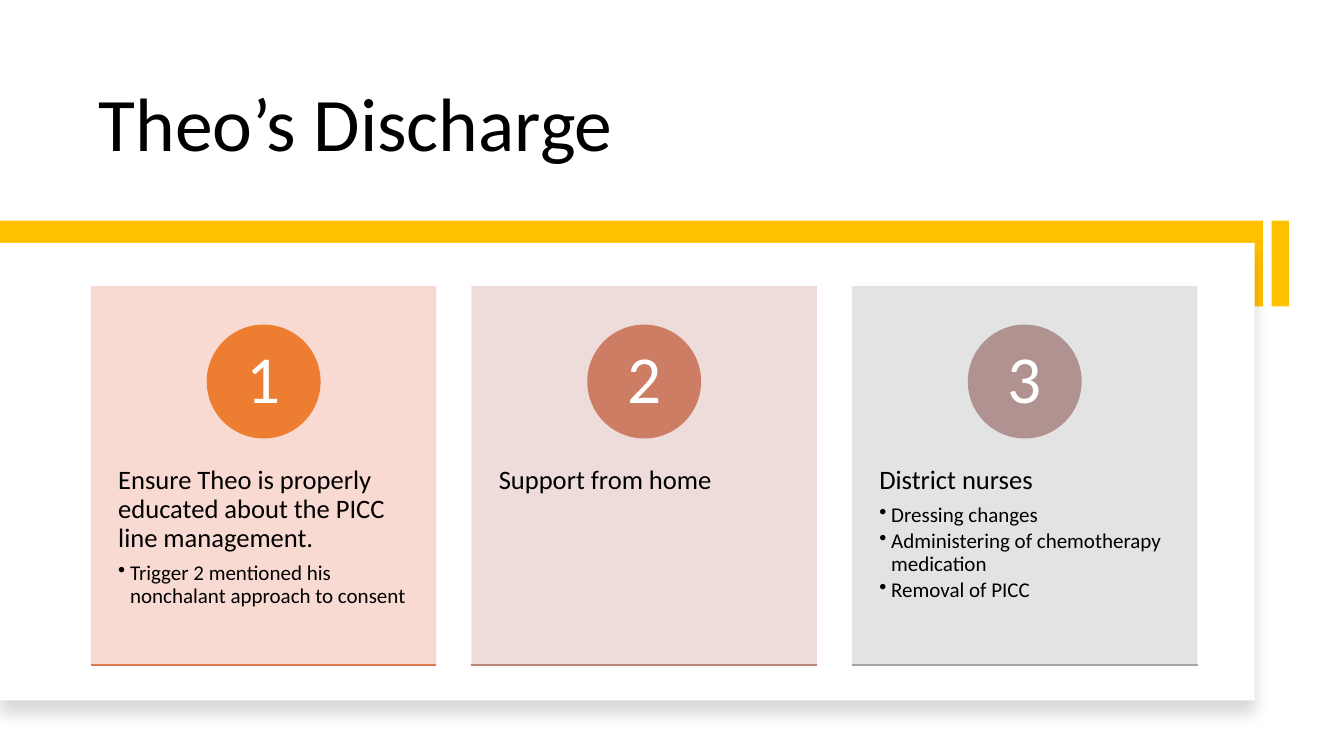
"""Build the discharge slide with three numbered cards."""
from dataclasses import dataclass

from lxml.etree import SubElement
from pptx import Presentation
from pptx.dml.color import RGBColor
from pptx.enum.shapes import MSO_CONNECTOR as Connector, MSO_SHAPE as Preset
from pptx.enum.text import MSO_ANCHOR as Anchor, MSO_AUTO_SIZE as AutoSize, PP_ALIGN as Align
from pptx.oxml.ns import qn
from pptx.util import Cm, Pt

FONT = "Calibri"
GOLD = "FFC000"
CARD_LEFT, CARD_TOP, CARD_WIDTH, CARD_HEIGHT, CARD_PITCH = 2.29, 7.21, 8.71, 9.55, 9.59
CIRCLE_SIZE, CIRCLE_TOP = 2.87, 8.18
TEXT_TOP, TEXT_HEIGHT = 10.85, 5.74


@dataclass
class Card:
    heading: str
    bullets: list[str]
    panel: str
    circle: str
    baseline: str


CARDS = [
    Card("Ensure Theo is properly educated about the PICC line management.",
         ["Trigger 2 mentioned his nonchalant approach to consent"],
         "F8D7CE", "ED7D31", "DC7A4B"),
    Card("Support from home", [], "EDD9D7", "CC7D64", "BD867B"),
    Card("District nurses",
         ["Dressing changes", "Administering of chemotherapy medication", "Removal of PICC"],
         "E1E1E1", "B09391", "A5A5A5"),
]


def paint(color_format, color: str) -> None:
    """Apply a hex colour to a fill, line or font colour."""
    color_format.rgb = RGBColor.from_string(color)


def add_block(slide, preset, left: float, top: float, width: float, height: float,
              color: str, opacity: int = 100):
    """Add a filled shape without outline, measured in centimetres."""
    shape = slide.shapes.add_shape(preset, Cm(left), Cm(top), Cm(width), Cm(height))
    shape.shadow.inherit = False
    shape.fill.solid()
    paint(shape.fill.fore_color, color)
    shape.line.fill.background()
    if opacity < 100:
        color_element = shape._element.spPr.find(qn("a:solidFill"))[0]
        SubElement(color_element, qn("a:alpha"), val=str(opacity * 1000))
    return shape


def add_soft_shadow(shape) -> None:
    """Give a shape a faint shadow that falls straight down."""
    effects = shape._element.spPr.find(qn("a:effectLst"))
    shadow = SubElement(effects, qn("a:outerShdw"), blurRad=str(Pt(11)), dist=str(Pt(10)),
                        dir="5400000", algn="t", rotWithShape="0")
    color = SubElement(shadow, qn("a:srgbClr"), val="000000")
    SubElement(color, qn("a:alpha"), val="15000")


def set_frame(frame, anchor, horizontal: float, vertical: float) -> None:
    """Set wrapping, anchoring and insets of a text frame."""
    frame.word_wrap = True
    frame.auto_size = AutoSize.NONE
    frame.vertical_anchor = anchor
    frame.margin_left = frame.margin_right = Cm(horizontal)
    frame.margin_top = frame.margin_bottom = Cm(vertical)


def write(paragraph, text: str, *, size: float, color: str = "000000", align=Align.LEFT,
          after: float = 0, bullet: bool = False) -> None:
    """Write one formatted paragraph."""
    paragraph.alignment = align
    paragraph.line_spacing = 0.9
    paragraph.space_before = Pt(0)
    paragraph.space_after = Pt(after)
    run = paragraph.add_run()
    run.text = text
    run.font.name = FONT
    run.font.size = Pt(size)
    paint(run.font.color, color)
    if bullet:
        paragraph.level = 1
        properties = paragraph._p.get_or_add_pPr()
        properties.set("marL", str(Cm(0.3)))
        properties.set("indent", str(-Cm(0.3)))
        SubElement(properties, qn("a:buChar"), char="•")


def add_card(slide, card: Card, number: int) -> None:
    """Draw one card with its panel, text, numbered circle and baseline."""
    left = CARD_LEFT + (number - 1) * CARD_PITCH
    add_block(slide, Preset.RECTANGLE, left, CARD_TOP, CARD_WIDTH, CARD_HEIGHT, card.panel, 90)

    text_box = slide.shapes.add_textbox(Cm(left), Cm(TEXT_TOP), Cm(CARD_WIDTH), Cm(TEXT_HEIGHT))
    frame = text_box.text_frame
    set_frame(frame, Anchor.TOP, 0.69, 0.91)
    write(frame.paragraphs[0], card.heading, size=19, after=6.65)
    for bullet in card.bullets:
        write(frame.add_paragraph(), bullet, size=15, after=2.25, bullet=True)

    circle = add_block(slide, Preset.OVAL, left + (CARD_WIDTH - CIRCLE_SIZE) / 2, CIRCLE_TOP,
                       CIRCLE_SIZE, CIRCLE_SIZE, card.circle)
    set_frame(circle.text_frame, Anchor.MIDDLE, 0.23, 0.03)
    write(circle.text_frame.paragraphs[0], str(number), size=48, color="FFFFFF",
          align=Align.CENTER)

    bottom = Cm(CARD_TOP + CARD_HEIGHT)
    baseline = slide.shapes.add_connector(Connector.STRAIGHT, Cm(left), bottom,
                                          Cm(left + CARD_WIDTH), bottom)
    paint(baseline.line.color, card.baseline)
    baseline.line.width = Pt(1)
    SubElement(baseline._element.spPr, qn("a:effectLst"))


def main() -> None:
    """Build and save the presentation."""
    presentation = Presentation()
    presentation.slide_width, presentation.slide_height = Cm(33.87), Cm(19.05)
    slide = presentation.slides.add_slide(presentation.slide_layouts[5])

    title = slide.shapes.title
    title.left, title.top, title.width, title.height = Cm(2.24), Cm(1.07), Cm(25.65), Cm(3.3)
    set_frame(title.text_frame, Anchor.BOTTOM, 0.25, 0.13)
    write(title.text_frame.paragraphs[0], "Theo’s Discharge", size=54)

    add_block(slide, Preset.RECTANGLE, 32.05, 5.56, 0.43, 2.16, GOLD)
    add_block(slide, Preset.RECTANGLE, 0, 5.56, 31.83, 2.16, GOLD)
    add_soft_shadow(add_block(slide, Preset.RECTANGLE, 0, 6.12, 31.62, 11.53, "FFFFFF"))

    for number, card in enumerate(CARDS, start=1):
        add_card(slide, card, number)
    presentation.save("out.pptx")


if __name__ == "__main__":
    main()
